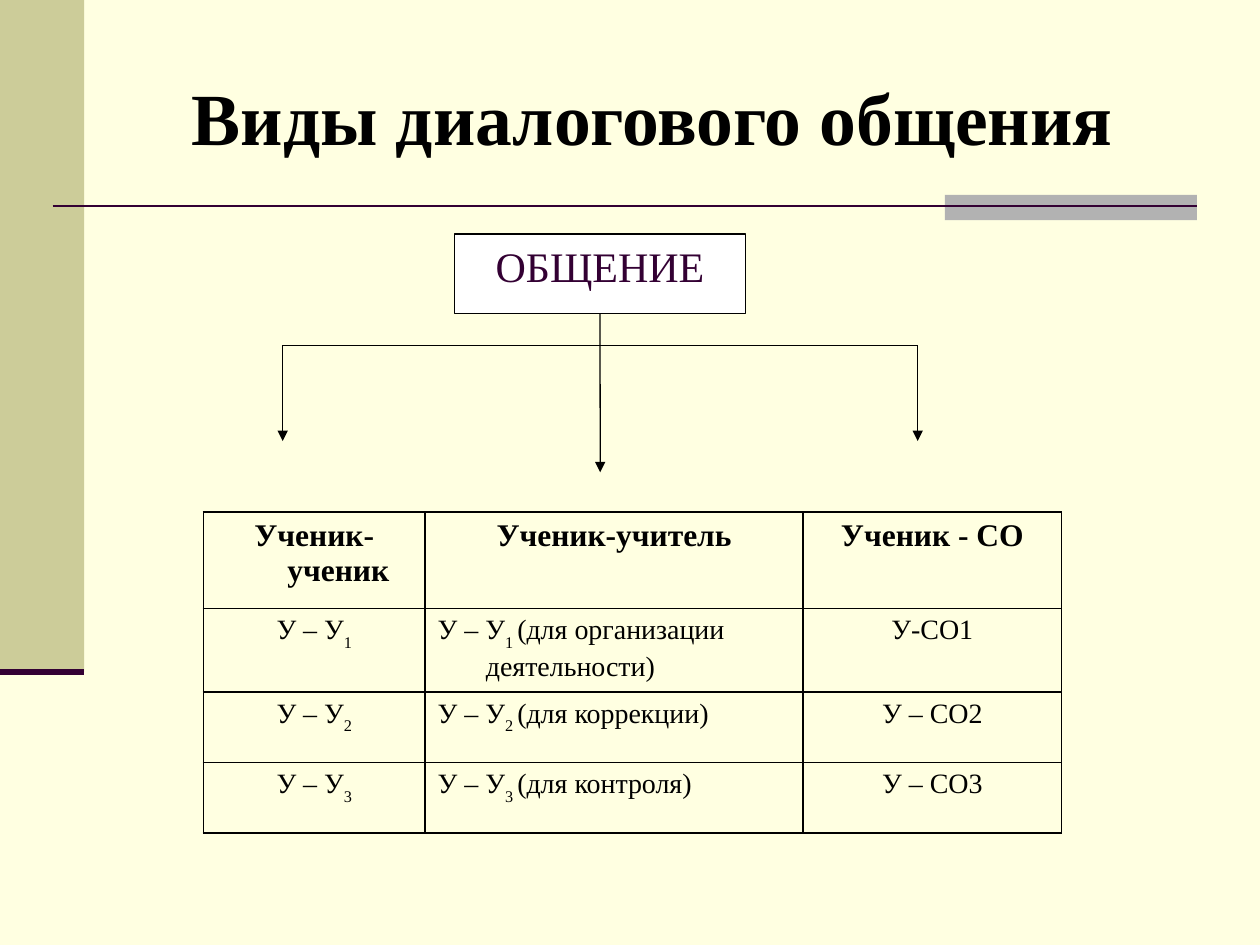
from lxml import etree
from pptx import Presentation
from pptx.dml.color import RGBColor
from pptx.enum.shapes import MSO_CONNECTOR, MSO_SHAPE
from pptx.enum.text import MSO_ANCHOR, MSO_AUTO_SIZE, PP_ALIGN
from pptx.oxml.ns import qn
from pptx.util import Cm, Pt

RECT = MSO_SHAPE.RECTANGLE
STRAIGHT = MSO_CONNECTOR.STRAIGHT
CENTER, LEFT = PP_ALIGN.CENTER, PP_ALIGN.LEFT
TOP, MIDDLE = MSO_ANCHOR.TOP, MSO_ANCHOR.MIDDLE
NO_FIT = MSO_AUTO_SIZE.NONE
BOTTOM_SIDE = 2
FONT = "Times New Roman"
BLACK, PLUM, WHITE = "000000", "330033", "FFFFFF"

HEADERS = ["Ученик-ученик", "Ученик-учитель", "Ученик - СО"]
ROWS = [
    ["У – У|1", "У – У|1 |(для организации деятельности)", "У-СО1"],
    ["У – У|2", "У – У|2 |(для коррекции)", "У – СО2"],
    ["У – У|3", "У – У|3 |(для контроля)", "У – СО3"],
]


def rgb(value):
    return RGBColor.from_string(value)


def write(p, text, size=16, color=BLACK, bold=False, align=CENTER):
    p.alignment = align
    for i, part in enumerate(text.split("|")):
        r = p.add_run()
        r.text = part
        r.font.name = FONT
        r.font.size = Pt(size)
        r.font.bold = bold
        r.font.color.rgb = rgb(color)
        if i % 2:
            r.font._element.set("baseline", "-30000")


class Slide:
    indent = Cm(0.97)

    def __init__(self, prs, background):
        self.s = prs.slides.add_slide(prs.slide_layouts[5])
        self.s.background.fill.solid()
        self.s.background.fill.fore_color.rgb = rgb(background)

    def rect(self, x, y, w, h, fill, line=None):
        sp = self.s.shapes.add_shape(RECT, Cm(x), Cm(y), Cm(w), Cm(h))
        sp.shadow.inherit = False
        sp.fill.solid()
        sp.fill.fore_color.rgb = rgb(fill)
        if line:
            sp.line.color.rgb = rgb(line)
            sp.line.width = Pt(0.75)
        else:
            sp.line.fill.background()
        return sp

    def line(self, x1, y1, x2, y2, color=BLACK, width=0.75, arrow=False):
        cxn = self.s.shapes.add_connector(STRAIGHT, Cm(x1), Cm(y1), Cm(x2), Cm(y2))
        cxn.line.color.rgb = rgb(color)
        cxn.line.width = Pt(width)
        if arrow:
            etree.SubElement(cxn.line._get_or_add_ln(), qn("a:tailEnd"), type="triangle")
        etree.SubElement(cxn._element.spPr, qn("a:effectLst"))
        return cxn

    def title(self, text, x, y, w, h):
        sp = self.s.shapes.title
        sp.left, sp.top, sp.width, sp.height = Cm(x), Cm(y), Cm(w), Cm(h)
        tf = sp.text_frame
        tf.auto_size = NO_FIT
        tf.vertical_anchor = MIDDLE
        write(tf.paragraphs[0], text, size=42, bold=True)

    def box(self, text, x, y, w, h):
        sp = self.rect(x, y, w, h, WHITE, BLACK)
        sp.text_frame.vertical_anchor = TOP
        write(sp.text_frame.paragraphs[0], text, size=24, color=PLUM)
        return sp

    def border(self, cell):
        tc_pr = cell._tc.get_or_add_tcPr()
        for side in ("a:lnL", "a:lnR", "a:lnT", "a:lnB"):
            ln = etree.SubElement(tc_pr, qn(side), w=str(Pt(1)))
            fill = etree.SubElement(ln, qn("a:solidFill"))
            etree.SubElement(fill, qn("a:srgbClr"), val=BLACK)

    def table(self, rows, x, y, widths, heights):
        table = self.s.shapes.add_table(
            len(heights), len(widths), Cm(x), Cm(y), Cm(sum(widths)), Cm(sum(heights))
        ).table
        table.first_row = table.horz_banding = False
        for column, width in zip(table.columns, widths):
            column.width = Cm(width)
        for i, (texts, height) in enumerate(zip(rows, heights)):
            table.rows[i].height = Cm(height)
            for j, text in enumerate(texts):
                cell = table.cell(i, j)
                self.border(cell)
                cell.fill.background()
                p = cell.text_frame.paragraphs[0]
                header = i == 0
                align = LEFT if j == 1 and not header else CENTER
                write(p, text, size=18 if header else 16, bold=header, align=align)
                p_pr = p._p.get_or_add_pPr()
                p_pr.set("marL", str(self.indent))
                p_pr.set("indent", str(-self.indent))


def main():
    prs = Presentation()
    prs.slide_width, prs.slide_height = Cm(25.4), Cm(19.05)
    slide = Slide(prs, "FFFFE1")

    slide.rect(0, 0, 1.7, 13.55, "CCCC99")
    slide.rect(19.05, 3.93, 5.08, 0.51, "B2B2B2")
    slide.line(1.06, 4.15, 24.13, 4.15, PLUM, 1.5)
    slide.line(0, 13.55, 1.7, 13.55, PLUM, 3.5)
    slide.title("Виды диалогового общения ", 2.54, 0.76, 21.59, 3.18)

    slide.table([HEADERS] + ROWS, 4.1, 10.32, [4.47, 7.62, 5.21], [1.95, 1.68, 1.42, 1.42])

    box = slide.box("ОБЩЕНИЕ", 9.16, 4.72, 5.87, 1.6)
    center, branch, spread = 12.1, 6.96, 6.4
    stem = slide.line(center, 6.32, center, 9.52, arrow=True)
    stem.begin_connect(box, BOTTOM_SIDE)
    slide.line(center - spread, branch, center + spread, branch)
    for x in (center - spread, center + spread):
        slide.line(x, branch, x, 8.89, arrow=True)

    prs.save("out.pptx")


if __name__ == "__main__":
    main()
